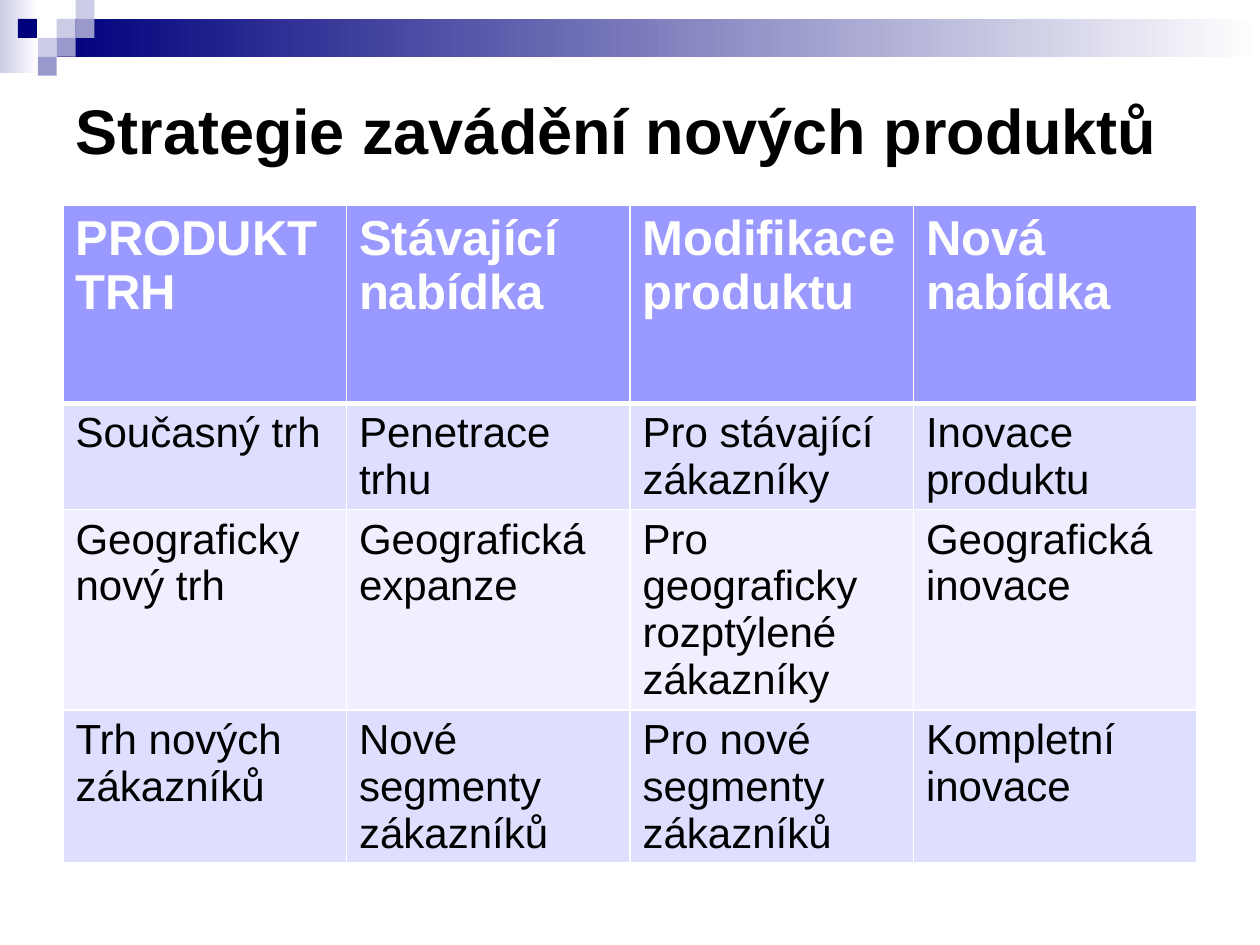
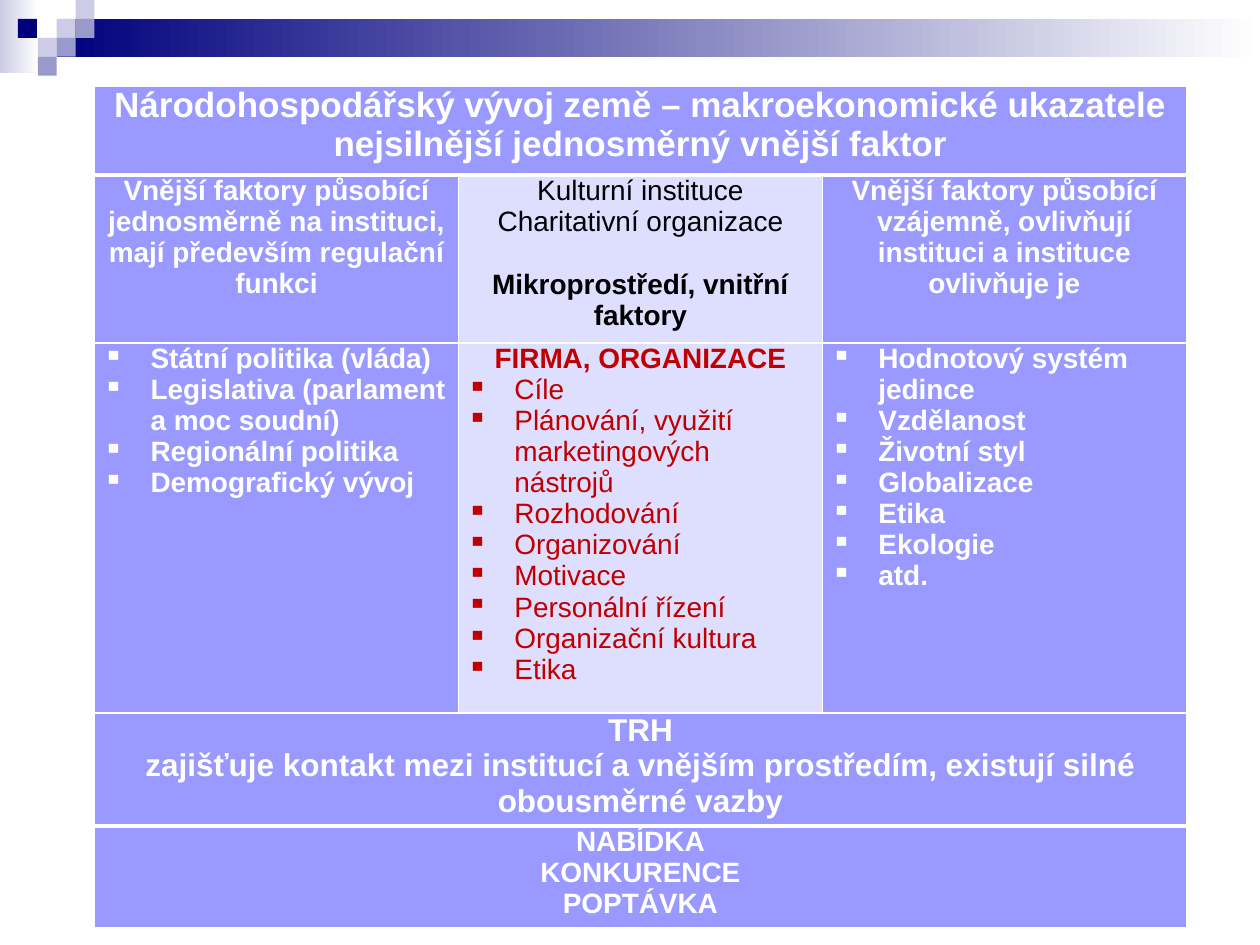
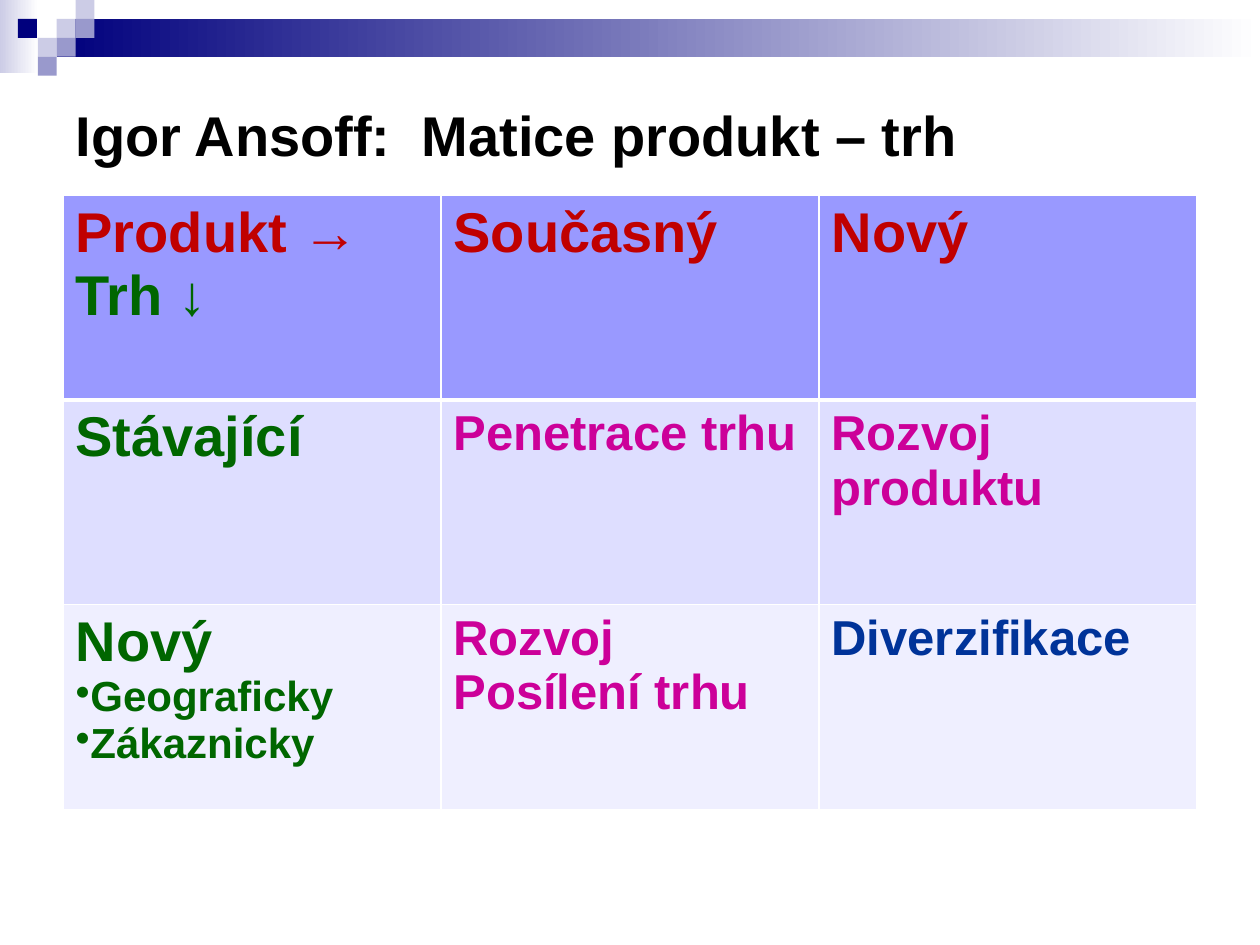
from dataclasses import dataclass, field
from lxml import etree
from pptx import Presentation
from pptx.dml.color import RGBColor
from pptx.enum.shapes import MSO_SHAPE
from pptx.enum.text import MSO_ANCHOR, MSO_AUTO_SIZE, PP_ALIGN
from pptx.oxml.ns import qn
from pptx.util import Pt

RECT = MSO_SHAPE.RECTANGLE
MIDDLE = MSO_ANCHOR.MIDDLE
NO_FIT = MSO_AUTO_SIZE.NONE
LEFT, CENTER = PP_ALIGN.LEFT, PP_ALIGN.CENTER


@dataclass(frozen=True)
class Theme:
    font: str = "Arial"
    colors: dict = field(default_factory=lambda: {
        "white": "FFFFFF", "black": "000000", "navy": "00007D",
        "mist": "CCCCE6", "slate": "9999CC",
        "head": "9999FF", "light": "DEDEFF", "pale": "EFEFFF",
        "red": "C00000", "green": "006600", "magenta": "CC0099", "blue": "003399",
    })
    styles: dict = field(default_factory=lambda: {
        "strategy_head": dict(size=28, color="white", bold=True),
        "strategy": dict(size=24, color="black"),
        "banner": dict(size=20, color="white", bold=True, align=CENTER),
        "market": dict(size=18, color="white", bold=True, align=CENTER),
        "factor": dict(size=16, color="white", bold=True, align=CENTER),
        "factor_item": dict(size=16, color="white", bold=True, bullet="▪", indent=27),
        "inner": dict(size=16, color="black", align=CENTER),
        "inner_head": dict(size=16, color="black", bold=True, align=CENTER, before=18.4),
        "firm": dict(size=16, color="red", bold=True, align=CENTER),
        "firm_item": dict(size=16, color="red", bullet="▪", indent=27),
        "product": dict(size=32, color="red", bold=True),
        "market_axis": dict(size=32, color="green", bold=True),
        "market_item": dict(size=24, color="green", bold=True, bullet="•"),
        "growth": dict(size=28, color="magenta", bold=True),
        "diversify": dict(size=28, color="blue", bold=True),
    })

    def rgb(self, name):
        return RGBColor.from_string(self.colors[name])


THEME = Theme()

UNIT = 10.8
BANDS = [
    ((0, 0, 22, 42), "mist"),
    ((3 * UNIT, UNIT, 720 - 3 * UNIT, 2 * UNIT), "navy"),
]
SQUARES = [
    (3, 1, "mist"), (4, 0, "mist"), (4, 1, "slate"), (2, 2, "mist"),
    (0.95, 1, "navy"), (3, 2, "slate"), (2, 3, "slate"),
]


def cell(fill, style, *lines):
    return fill, [(style, line) for line in lines]


def row(fill, style, *texts):
    return [cell(fill, style, text) for text in texts]


SLIDES = [
    dict(
        title=("Strategie zavádění nových produktů", 36, (36, 36, 648, 76)),
        at=(36, 117), width=648, heights=[113.5, 60.5, 114.5, 87],
        margins=(7.2, 3.6), thick=[1],
        rows=[
            [cell("head", "strategy_head", "PRODUKT", "TRH"),
             *row("head", "strategy_head",
                  "Stávající nabídka", "Modifikace produktu", "Nová nabídka")],
            row("light", "strategy", "Současný trh", "Penetrace trhu",
                "Pro stávající zákazníky", "Inovace produktu"),
            row("pale", "strategy", "Geograficky nový trh", "Geografická expanze",
                "Pro geograficky rozptýlené zákazníky", "Geografická inovace"),
            row("light", "strategy", "Trh nových zákazníků", "Nové segmenty zákazníků",
                "Pro nové segmenty zákazníků", "Kompletní inovace"),
        ],
    ),
    dict(
        title=None,
        at=(54, 49), width=624, heights=[51, 96, 211.5, 64.5, 58],
        margins=(5, 0), thick=[1, 4],
        rows=[
            [cell("head", "banner",
                  "Národohospodářský vývoj země – makroekonomické ukazatele",
                  "nejsilnější jednosměrný vnější faktor")],
            [cell("head", "factor",
                  "Vnější faktory působící jednosměrně na instituci, "
                  "mají především regulační funkci"),
             ("light", [("inner", "Kulturní instituce"),
                        ("inner", "Charitativní organizace"),
                        ("inner_head", "Mikroprostředí, vnitřní faktory")]),
             cell("head", "factor",
                  "Vnější faktory působící vzájemně, ovlivňují instituci "
                  "a instituce ovlivňuje je")],
            [cell("head", "factor_item", "Státní politika (vláda)",
                  "Legislativa (parlament a moc soudní)",
                  "Regionální politika", "Demografický vývoj"),
             ("light", [("firm", "FIRMA, ORGANIZACE")] + [
                 ("firm_item", item) for item in (
                     "Cíle", "Plánování, využití marketingových nástrojů",
                     "Rozhodování", "Organizování", "Motivace",
                     "Personální řízení", "Organizační kultura", "Etika")]),
             cell("head", "factor_item", "Hodnotový systém jedince", "Vzdělanost",
                  "Životní styl", "Globalizace", "Etika", "Ekologie", "atd.")],
            [cell("head", "market", "TRH",
                  "zajišťuje kontakt mezi institucí a vnějším prostředím, "
                  "existují silné obousměrné vazby")],
            [cell("head", "factor", "NABÍDKA", "KONKURENCE", "POPTÁVKA")],
        ],
    ),
    dict(
        title=("Igor Ansoff:  Matice produkt – trh", 32, (36, 36, 648, 81)),
        at=(36, 111.5), width=648, heights=[117] * 3,
        margins=(7.2, 3.6), thick=[1],
        rows=[
            [("head", [("product", "Produkt →"), ("market_axis", "Trh ↓")]),
             *row("head", "product", "Současný", "Nový")],
            [cell("light", "market_axis", "Stávající"),
             *row("light", "growth", "Penetrace trhu", "Rozvoj produktu")],
            [("pale", [("market_axis", "Nový"), ("market_item", "Geograficky"),
                       ("market_item", "Zákaznicky")]),
             cell("pale", "growth", "Rozvoj Posílení trhu"),
             cell("pale", "diversify", "Diverzifikace")],
        ],
    ),
]


def set_attrs(obj, values):
    for name, value in values.items():
        setattr(obj, name, value)


def set_font(font, size, color, bold=False):
    set_attrs(font, dict(name=THEME.font, size=Pt(size), bold=bold))
    font.color.rgb = THEME.rgb(color)


def add_rect(group, box, color, fade=False):
    sp = group.shapes.add_shape(RECT, *map(Pt, box))
    sp.shadow.inherit = False
    sp.line.fill.background()
    if fade:
        sp.fill.gradient()
        sp.fill.gradient_angle = 0
        for stop, name, place in zip(sp.fill.gradient_stops, (color, "white"), (0, 1)):
            stop.color.rgb = THEME.rgb(name)
            stop.position = place
    else:
        sp.fill.solid()
        sp.fill.fore_color.rgb = THEME.rgb(color)


def decorate_master(prs, s):
    group = s.shapes.add_group_shape()
    for box, color in BANDS:
        add_rect(group, box, color, fade=True)
    for col, line, color in SQUARES:
        add_rect(group, (col * UNIT, line * UNIT, UNIT, UNIT), color)
    for number, el in enumerate(group.element.iter(qn("p:cNvPr")), 100):
        el.set("id", str(number))
    prs.slide_master.element.cSld.spTree.insert(2, group.element)


def set_title(s, text, size, box):
    sp = s.shapes.title
    set_attrs(sp, dict(zip(("left", "top", "width", "height"), map(Pt, box))))
    tf = sp.text_frame
    set_attrs(tf, dict(word_wrap=True, auto_size=NO_FIT, vertical_anchor=MIDDLE))
    p = tf.paragraphs[0]
    p.alignment = LEFT
    r = p.add_run()
    r.text = text
    set_font(r.font, size, "black", True)


def write_paragraph(p, text, size, color, bold=False, align=LEFT,
                    bullet=None, indent=0, before=0):
    set_attrs(p, dict(alignment=align, space_before=Pt(before)))
    r = p.add_run()
    r.text = text
    set_font(r.font, size, color, bold)
    if bullet:
        pPr = p._p.get_or_add_pPr()
        pPr.set("marL", str(Pt(indent)))
        pPr.set("indent", str(-Pt(indent)))
        etree.SubElement(pPr, qn("a:buChar"), char=bullet)


def set_borders(c, top, bottom):
    tcPr = c._tc.get_or_add_tcPr()
    for side, width in (("L", 1), ("R", 1), ("T", top), ("B", bottom)):
        ln = etree.SubElement(tcPr, qn("a:ln" + side), w=str(Pt(width)))
        fill = etree.SubElement(ln, qn("a:solidFill"))
        etree.SubElement(fill, qn("a:srgbClr"), val=THEME.colors["white"])


def add_matrix(s, at, width, heights, margins, thick, rows):
    count = max(map(len, rows))
    box = (*at, width, sum(heights))
    table = s.shapes.add_table(len(rows), count, *map(Pt, box)).table
    set_attrs(table, dict(first_row=False, horz_banding=False))
    for column in table.columns:
        column.width = Pt(width / count)
    side, edge = map(Pt, margins)
    for i, (height, cells) in enumerate(zip(heights, rows)):
        table.rows[i].height = Pt(height)
        for j in range(count):
            set_borders(table.cell(i, j), *(3 if k in thick else 1 for k in (i, i + 1)))
        if len(cells) == 1:
            table.cell(i, 0).merge(table.cell(i, count - 1))
        for j, (fill, paragraphs) in enumerate(cells):
            c = table.cell(i, j)
            set_attrs(c, dict(margin_left=side, margin_right=side,
                              margin_top=edge, margin_bottom=edge))
            c.fill.solid()
            c.fill.fore_color.rgb = THEME.rgb(fill)
            tf = c.text_frame
            for n, (style, text) in enumerate(paragraphs):
                p = tf.add_paragraph() if n else tf.paragraphs[0]
                write_paragraph(p, text, **THEME.styles[style])


def main():
    prs = Presentation()
    set_attrs(prs, dict(slide_width=Pt(720), slide_height=Pt(540)))
    title_only, blank = prs.slide_layouts[5], prs.slide_layouts[6]
    for number, content in enumerate(SLIDES):
        title = content["title"]
        s = prs.slides.add_slide(title_only if title else blank)
        if number == 0:
            decorate_master(prs, s)
        if title:
            set_title(s, *title)
        add_matrix(s, **{k: v for k, v in content.items() if k != "title"})
    prs.save("out.pptx")


if __name__ == "__main__":
    main()
